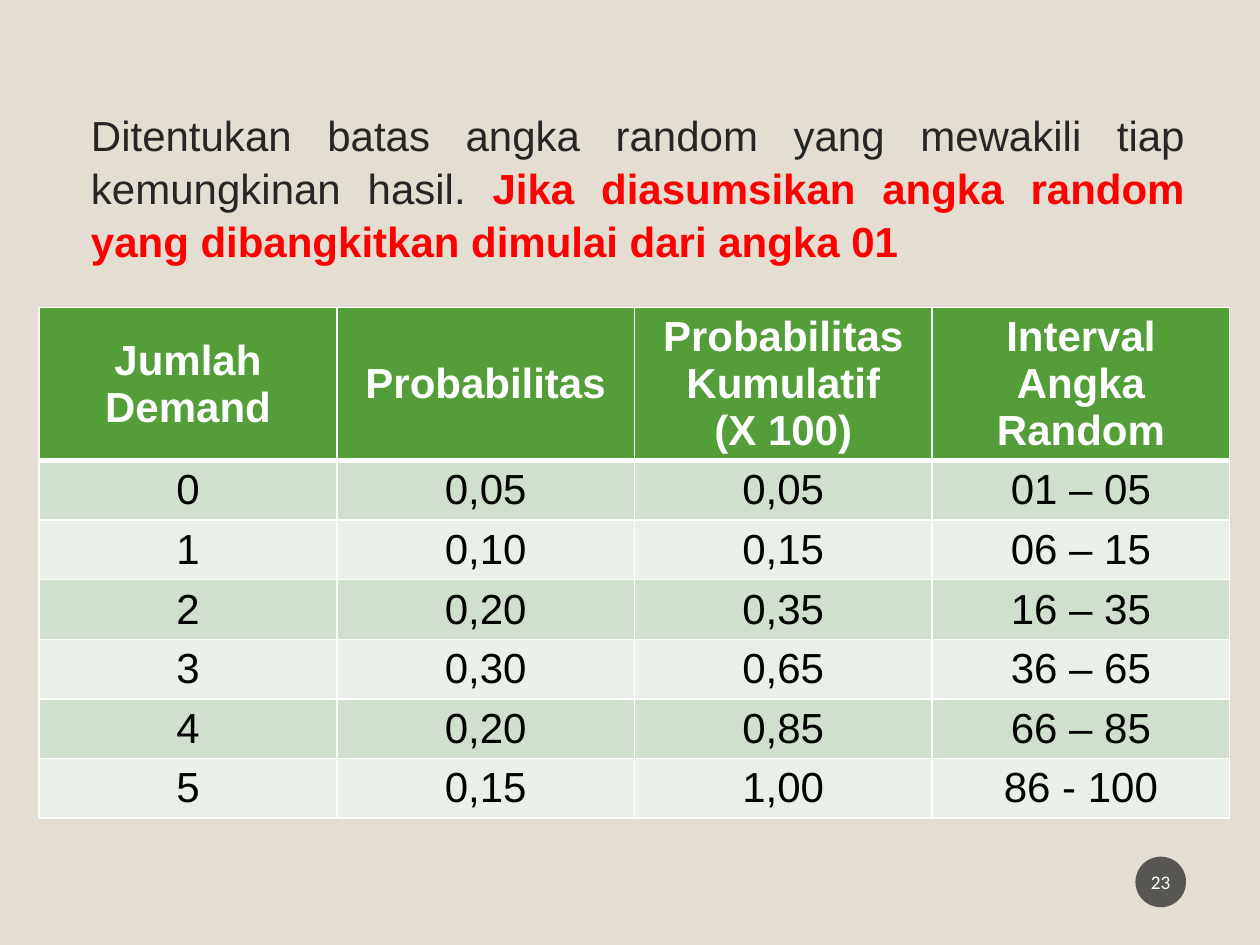
from lxml import etree
from pptx import Presentation
from pptx import util as u
from pptx.dml.color import RGBColor
from pptx.enum import shapes, text
from pptx.oxml import ns

Cm, Pt = u.Cm, u.Pt
COLORS = {
    "background": "E3DED1", "body": "262626", "emphasis": "FF0000",
    "header": "549E39", "odd": "D1DFCE", "even": "E9F0E8",
    "badge": "1D1D1D", "white": "FFFFFF", "black": "000000",
}


def style(run, size, color, bold=False, face="Arial"):
    run.font.name = face
    run.font.size = Pt(size)
    run.font.bold = bold
    run.font.color.rgb = RGBColor.from_string(COLORS[color])


def add_border(cell, side, width):
    line = etree.SubElement(cell._tc.get_or_add_tcPr(), ns.qn(f"a:{side}"), w=str(Pt(width)))
    fill = etree.SubElement(line, ns.qn("a:solidFill"))
    etree.SubElement(fill, ns.qn("a:srgbClr"), val=COLORS["white"])


prs = Presentation()
prs.slide_width, prs.slide_height = Cm(25.4), Cm(19.05)
slide = prs.slides.add_slide(prs.slide_layouts[1])
slide.background.fill.solid()
slide.background.fill.fore_color.rgb = RGBColor.from_string(COLORS["background"])

# Explanation in the body placeholder; the slide has no title
unused_title = slide.shapes.title._element
unused_title.getparent().remove(unused_title)
explanation = slide.placeholders[1]
explanation.left, explanation.top = Cm(1.58), Cm(2.03)
explanation.width, explanation.height = Cm(22.56), Cm(3.58)
paragraph = explanation.text_frame.paragraphs[0]
paragraph.alignment = text.PP_ALIGN.JUSTIFY
paragraph.line_spacing = 1.05
paragraph.space_before = Pt(10)
properties = paragraph._p.get_or_add_pPr()
properties.set("marL", "0")
properties.set("indent", "0")
etree.SubElement(properties, ns.qn("a:buNone"))
for words, color, bold in (
    ("Ditentukan batas angka random yang mewakili tiap kemungkinan hasil. ", "body", False),
    ("Jika diasumsikan angka random yang dibangkitkan dimulai dari angka 01", "emphasis", True),
):
    run = paragraph.add_run()
    run.text = words
    style(run, 24, color, bold)

# Page number badge
badge = slide.shapes.add_shape(shapes.MSO_SHAPE.OVAL, Cm(22.89), Cm(17.27), Cm(1.02), Cm(1.02))
badge.shadow.inherit = False
badge.line.fill.background()
badge.fill.solid()
badge.fill.fore_color.rgb = RGBColor.from_string(COLORS["badge"])
badge_color = badge.fill._xPr.find(ns.qn("a:solidFill"))[0]
etree.SubElement(badge_color, ns.qn("a:alpha"), val="70000")
page = badge.text_frame
page.margin_left = page.margin_right = Cm(0.05)
page.vertical_anchor = text.MSO_ANCHOR.MIDDLE
page.text = "23"
page.paragraphs[0].alignment = text.PP_ALIGN.CENTER
style(page.paragraphs[0].runs[0], 11, "white", face="Calibri")

# Demand table with random number intervals
rows = [
    ("Jumlah Demand", "Probabilitas", "Probabilitas Kumulatif\n(X 100)", "Interval Angka Random"),
    ("0", "0,05", "0,05", "01 – 05"),
    ("1", "0,10", "0,15", "06 – 15"),
    ("2", "0,20", "0,35", "16 – 35"),
    ("3", "0,30", "0,65", "36 – 65"),
    ("4", "0,20", "0,85", "66 – 85"),
    ("5", "0,15", "1,00", "86 - 100"),
]
header_height, row_height = Cm(3.07), Cm(1.2)
demand = slide.shapes.add_table(
    len(rows), len(rows[0]), Cm(0.79), Cm(6.2), Cm(24), header_height + 6 * row_height
).table
for r, values in enumerate(rows):
    is_header = r == 0
    demand.rows[r].height = header_height if is_header else row_height
    band = "header" if is_header else ("odd" if r % 2 else "even")
    for c, value in enumerate(values):
        cell = demand.cell(r, c)
        cell.text = value
        if is_header:
            cell.vertical_anchor = text.MSO_ANCHOR.MIDDLE
        for line in cell.text_frame.paragraphs:
            line.alignment = text.PP_ALIGN.CENTER
            style(line.runs[0], 24, "white" if is_header else "black", is_header)
        for side in ("lnL", "lnR", "lnT", "lnB"):
            thick = (is_header and side == "lnB") or (r == 1 and side == "lnT")
            add_border(cell, side, 3 if thick else 1)
        cell.fill.solid()
        cell.fill.fore_color.rgb = RGBColor.from_string(COLORS[band])

prs.save("out.pptx")
